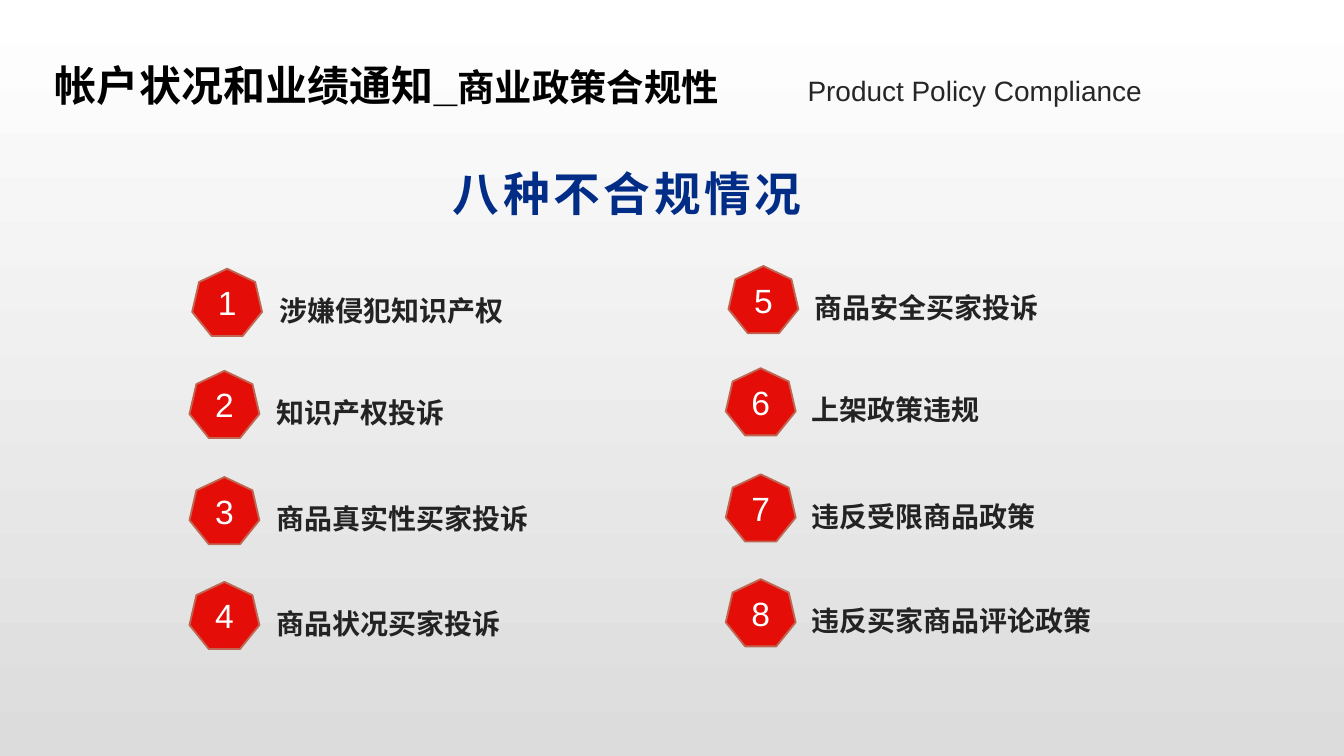
from lxml import etree
from pptx import Presentation
from pptx import util as u
from pptx.dml.color import RGBColor
from pptx.enum import shapes, text
from pptx.oxml.ns import qn

COLORS = {
    "black": "000000", "grey": "262626", "ink": "232324", "white": "FFFFFF",
    "mist": "DCDCDC", "red": "E40D08", "edge": "BF6753",
    "blue": "012D86", "navy": "0E2557",
}
LATIN, HAN = "Arial", "Noto Sans CJK SC"
WIDTH = 10
# Left edge, rise, distance from badge to label, and items of each column
COLS = [
    (1.41, 0, 0.36, ["涉嫌侵犯知识产权", "知识产权投诉", "商品真实性买家投诉", "商品状况买家投诉"]),
    (5.40, -0.02, 0.35, ["商品安全买家投诉", "上架政策违规", "违反受限商品政策", "违反买家商品评论政策"]),
]
# Shift to the right and top of each row
ROWS = [(0.02, 2.0), (0, 2.76), (0, 3.55), (0, 4.33)]


def rgb(name):
    return RGBColor.from_string(COLORS[name])


def blend(fill, first, last, angle):
    fill.gradient()
    fill.gradient_angle = angle
    for stop, name in zip(fill.gradient_stops, (first, last)):
        stop.color.rgb = rgb(name)


def write(para, words, size, color, font=HAN, bold=False, end=None, gap=0):
    """Add a run; end makes its colour a gradient, gap is letter spacing in points."""
    run = para.add_run()
    run.text = words
    face = run.font
    face.size, face.bold, face.name = u.Pt(size), bold, font
    if end:
        blend(face.fill, color, end, 0)
    else:
        face.color.rgb = rgb(color)
    props = run._r.get_or_add_rPr()
    etree.SubElement(props, qn("a:ea")).set("typeface", HAN)
    if gap:
        props.set("spc", str(gap * 100))


def box(slide, left, top, width, height, grow=True):
    frame = slide.shapes.add_textbox(*map(u.Inches, (left, top, width, height))).text_frame
    frame.word_wrap = True
    if grow:
        frame.auto_size = text.MSO_AUTO_SIZE.SHAPE_TO_FIT_TEXT
    return frame


def title(slide):
    para = box(slide, 0.31, 0.39, 8.41, 0.73).paragraphs[0]
    tabs = etree.SubElement(para._p.get_or_add_pPr(), qn("a:tabLst"))
    tab = etree.SubElement(tabs, qn("a:tab"))
    tab.set("pos", str(u.Inches(5.6)))
    tab.set("algn", "l")
    write(para, "帐户状况和业绩通知_", 22.5, "black", LATIN, True)
    write(para, "商业政策合规性\t", 20, "black", LATIN, True)
    write(para, "Product Policy Compliance", 15, "grey", LATIN)


def heading(slide):
    frame = box(slide, 3.26, 1.1, 2.92, 0.48, grow=False)
    frame.margin_left, frame.margin_right = u.Inches(0.11), u.Inches(0.08)
    frame.margin_top = frame.margin_bottom = u.Inches(0.04)
    para = frame.paragraphs[0]
    para.line_spacing = 1.2
    write(para, "八种不合规情况", 25, "blue", bold=True, end="navy", gap=2)


def badge(slide, left, top, number):
    shape = slide.shapes.add_shape(
        shapes.MSO_SHAPE.HEPTAGON, *map(u.Inches, (left, top, 0.52, 0.5)))
    shape.shadow.inherit = False
    shape.fill.solid()
    shape.fill.fore_color.rgb = rgb("red")
    shape.line.color.rgb = rgb("edge")
    shape.line.width = u.Pt(1)
    shape.text_frame.vertical_anchor = text.MSO_ANCHOR.MIDDLE
    para = shape.text_frame.paragraphs[0]
    para.alignment = text.PP_ALIGN.CENTER
    write(para, str(number), 18, "white", LATIN)


def label(slide, left, top, words):
    para = box(slide, left, top, 2.74, 0.48).paragraphs[0]
    para.alignment = text.PP_ALIGN.JUSTIFY
    para.line_spacing = 1.5
    props = para._p.get_or_add_pPr()
    props.set("marL", str(u.Inches(0.19)))
    props.set("indent", "0")
    write(para, words, 15, "ink", bold=True)


def main():
    deck = Presentation()
    deck.slide_width = u.Inches(WIDTH)
    deck.slide_height = u.Inches(WIDTH * 9 / 16)
    slide = deck.slides.add_slide(deck.slide_layouts[6])
    blend(slide.background.fill, "white", "mist", 270)
    title(slide)
    heading(slide)
    number = 0
    for left, rise, reach, items in COLS:
        for (shift, top), words in zip(ROWS, items):
            number += 1
            badge(slide, left + shift, top + rise, number)
            label(slide, left + shift + reach, top + rise + 0.01, words)
    deck.save("out.pptx")


if __name__ == "__main__":
    main()
